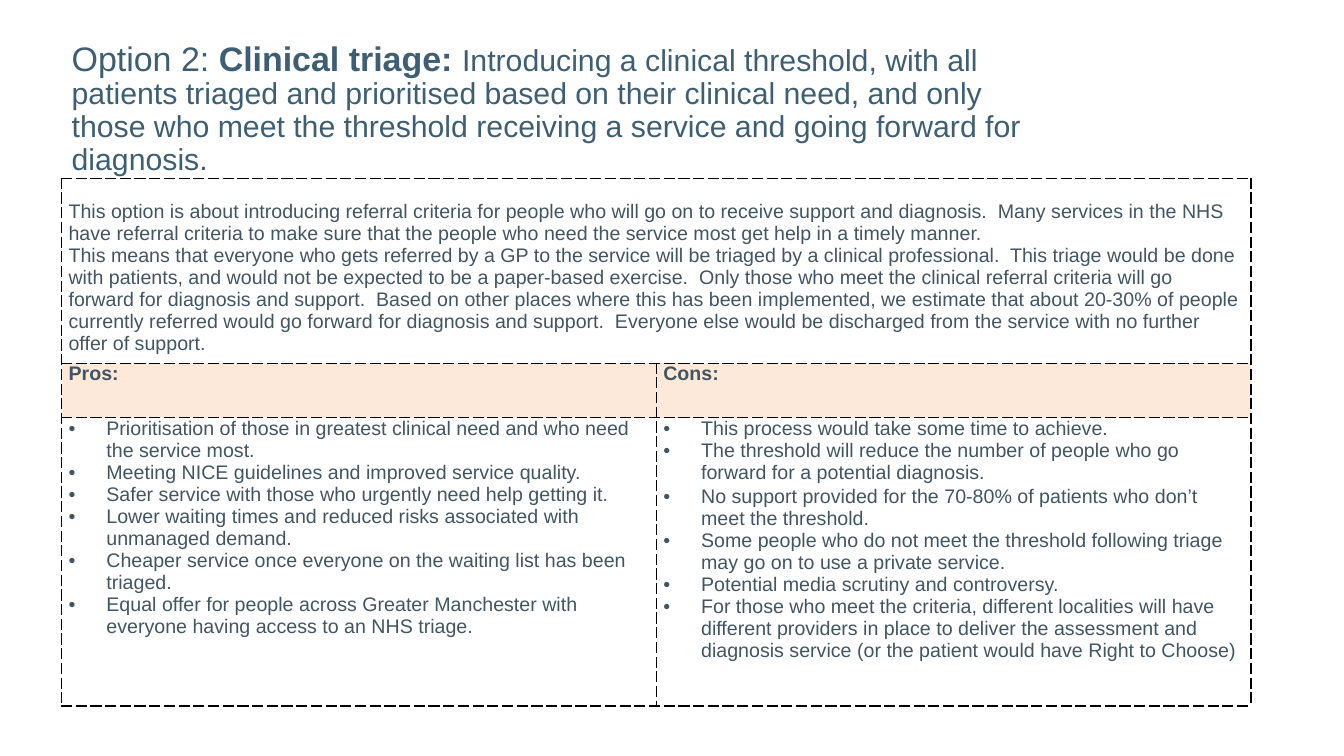
from lxml import etree
from pptx import Presentation
from pptx.dml.color import RGBColor
from pptx.enum import text
from pptx.oxml.ns import qn
from pptx.util import Pt

TITLE = [
    ("Option 2: ", 24.3, False),
    ("Clinical triage: ", 24.3, True),
    ("Introducing a clinical threshold, with all patients triaged and "
     "prioritised based on their clinical need, and only those who meet the "
     "threshold receiving a service and going forward for diagnosis.", 21.6, False),
]
ABOUT = [
    "This option is about introducing referral criteria for people who will go "
    "on to receive support and diagnosis.  Many services in the NHS have "
    "referral criteria to make sure that the people who need the service most "
    "get help in a timely manner.",
    "This means that everyone who gets referred by a GP to the service will be "
    "triaged by a clinical professional.  This triage would be done with "
    "patients, and would not be expected to be a paper-based exercise.  Only "
    "those who meet the clinical referral criteria will go forward for diagnosis "
    "and support.  Based on other places where this has been implemented, we "
    "estimate that about 20-30% of people currently referred would go forward "
    "for diagnosis and support.  Everyone else would be discharged from the "
    "service with no further offer of support.",
]
SIDES = {
    "Pros:": [
        "Prioritisation of those in greatest clinical need and who need the service most.",
        "Meeting NICE guidelines and improved service quality.",
        "Safer service with those who urgently need help getting it.",
        "Lower waiting times and reduced risks associated with unmanaged demand.",
        "Cheaper service once everyone on the waiting list has been triaged.",
        "Equal offer for people across Greater Manchester with everyone having "
        "access to an NHS triage.",
    ],
    "Cons:": [
        "This process would take some time to achieve.",
        "The threshold will reduce the number of people who go forward for a "
        "potential diagnosis.",
        "No support provided for the 70-80% of patients who don’t meet the threshold.",
        "Some people who do not meet the threshold following triage may go on to "
        "use a private service.",
        "Potential media scrutiny and controversy.",
        "For those who meet the criteria, different localities will have different "
        "providers in place to deliver the assessment and diagnosis service (or "
        "the patient would have Right to Choose)",
    ],
}
COLORS = {"title": "3E5F73", "body": "415563", "head": "FDE9D9",
          "list": "FFFFFF", "line": "000000"}
FONT, BODY = "Arial", 14
LEFT, TOP, WIDE = 44, 127.4, 849.6
ROWS = [132, 39, 206]
INDENT = 27


def add_run(para, words, size, color, bold=False):
    run = para.add_run()
    run.text = words
    font = run.font
    font.name, font.size, font.bold = FONT, Pt(size), bold
    font.color.rgb = RGBColor.from_string(COLORS[color])


def add_bullet(para):
    props = para._p.get_or_add_pPr()
    props.set("marL", str(Pt(INDENT)))
    props.set("indent", str(-Pt(INDENT)))
    etree.SubElement(props, qn("a:buFont"), typeface=FONT)
    etree.SubElement(props, qn("a:buChar"), char="•")


def add_border(cell):
    props = cell._tc.get_or_add_tcPr()
    for side in ("lnL", "lnR", "lnT", "lnB"):
        line = etree.SubElement(props, qn("a:" + side), w=str(Pt(1)))
        fill = etree.SubElement(line, qn("a:solidFill"))
        etree.SubElement(fill, qn("a:srgbClr"), val=COLORS["line"])
        etree.SubElement(line, qn("a:prstDash"), val="dash")


def fill_cell(cell, lines, color=None, bold=False, bullets=False, top=0):
    if color:
        cell.fill.solid()
        cell.fill.fore_color.rgb = RGBColor.from_string(COLORS[color])
    cell.margin_left = cell.margin_right = Pt(5)
    cell.margin_top, cell.margin_bottom = Pt(top), 0
    frame = cell.text_frame
    for i, words in enumerate(lines):
        para = frame.add_paragraph() if i else frame.paragraphs[0]
        if bullets:
            add_bullet(para)
        add_run(para, words, BODY, "body", bold)


def add_title(slide):
    title = slide.shapes.title
    title.left, title.top, title.width, title.height = map(Pt, (LEFT, 30, 705, 95))
    frame = title.text_frame
    frame.word_wrap = True
    frame.auto_size = text.MSO_AUTO_SIZE.NONE
    frame.vertical_anchor = text.MSO_ANCHOR.TOP
    frame.margin_top = frame.margin_bottom = 0
    para = frame.paragraphs[0]
    para.alignment = text.PP_ALIGN.LEFT
    para.line_spacing = 0.9
    for words, size, bold in TITLE:
        add_run(para, words, size, "title", bold)


def add_grid(slide):
    table = slide.shapes.add_table(len(ROWS), len(SIDES), Pt(LEFT), Pt(TOP),
                                   Pt(WIDE), Pt(sum(ROWS))).table
    table.first_row = table.horz_banding = False
    for row, high in zip(table.rows, ROWS):
        row.height = Pt(high)
    for col in table.columns:
        col.width = Pt(WIDE / len(SIDES))
    for cell in table.iter_cells():
        add_border(cell)
        cell.fill.background()
    about = table.cell(0, 0)
    about.merge(table.cell(0, len(SIDES) - 1))
    fill_cell(about, ABOUT, top=16)
    for i, (head, points) in enumerate(SIDES.items()):
        fill_cell(table.cell(1, i), [head], "head", bold=True)
        fill_cell(table.cell(2, i), points, "list", bullets=True)
    table.cell(2, 1).text_frame.paragraphs[1].space_after = Pt(1.4)


def main():
    deck = Presentation()
    deck.slide_width, deck.slide_height = Pt(960), Pt(540)
    slide = deck.slides.add_slide(deck.slide_layouts[5])
    add_title(slide)
    add_grid(slide)
    deck.save("out.pptx")


if __name__ == "__main__":
    main()
